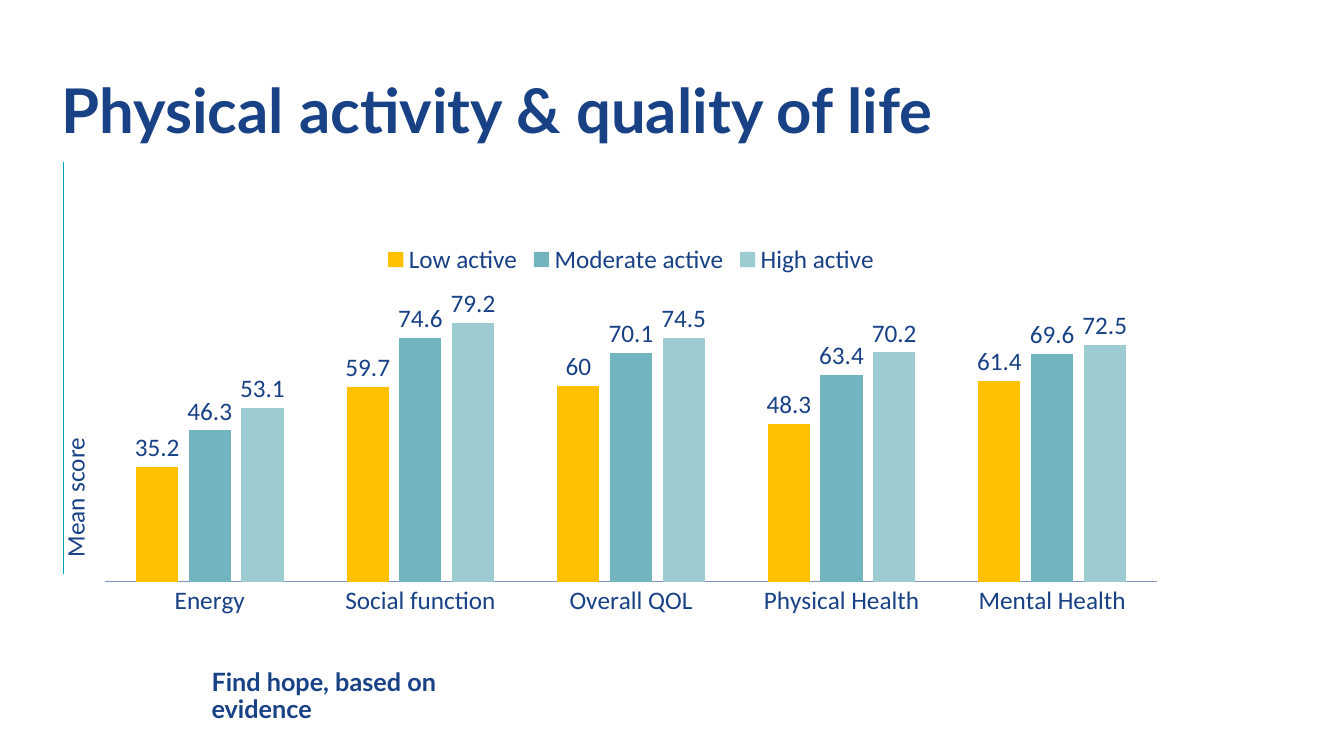
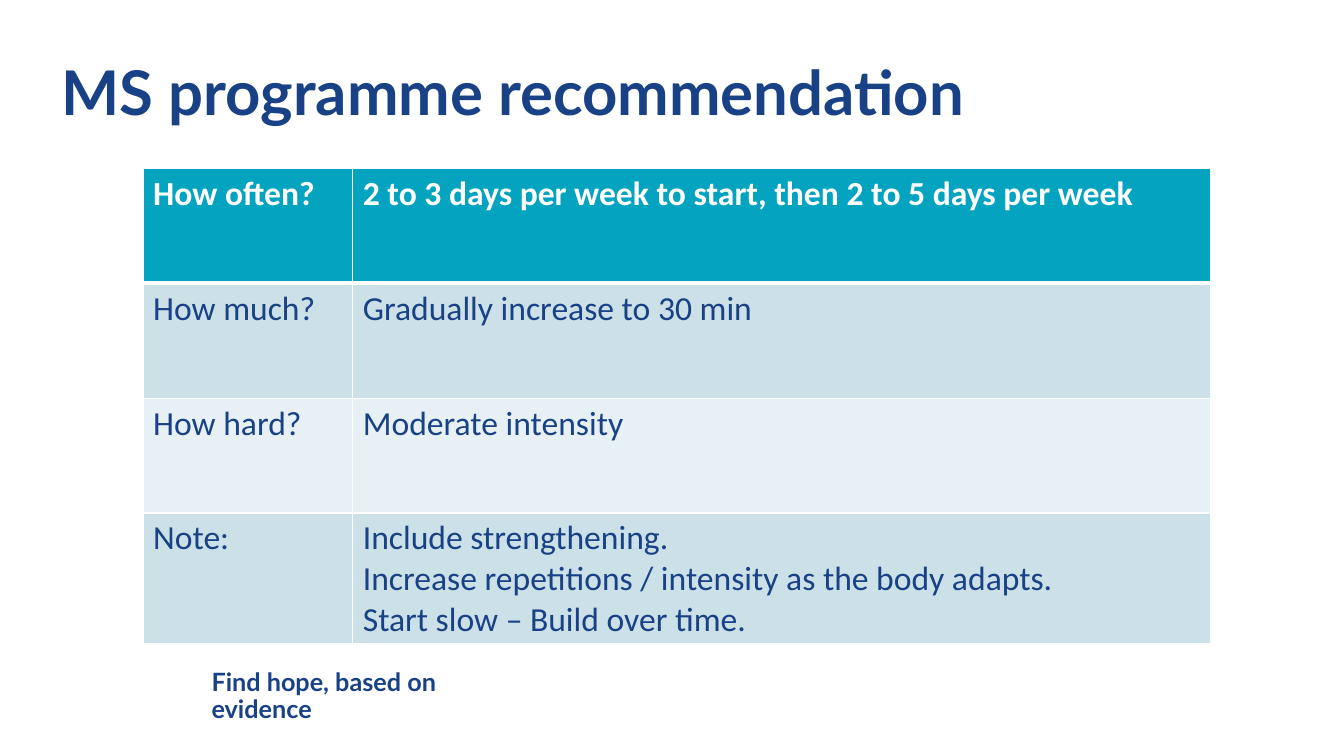
from pptx import Presentation
from pptx import util as u
from pptx.chart.data import CategoryChartData
from pptx.dml.color import RGBColor
from pptx.enum import chart as charts, shapes, text
from pptx.oxml import ns
from lxml import etree

NAVY = RGBColor(0x18, 0x41, 0x86)
TEAL = RGBColor(0x04, 0xA3, 0xBF)
WHITE = RGBColor(0xFF, 0xFF, 0xFF)
AMBER = RGBColor(0xFF, 0xC0, 0x00)
MID_TEAL = RGBColor(0x73, 0xB5, 0xBF)
PALE_TEAL = RGBColor(0x9D, 0xCB, 0xD2)
AXIS_BLUE = RGBColor(0x80, 0x94, 0xBC)
BAND_DARK = RGBColor(0xCC, 0xE0, 0xE8)
BAND_LIGHT = RGBColor(0xE7, 0xF0, 0xF4)
HEAD_FONT, BODY_FONT = "Lato", "Calibri"

deck = Presentation()
deck.slide_width, deck.slide_height = u.Inches(13.33), u.Inches(7.5)
COL, ROW = deck.slide_width / 100, deck.slide_height / 100


def grid(left, top, width, height):
    return int(left * COL), int(top * ROW), int(width * COL), int(height * ROW)


def write(frame, lines, size, font, color, bold=False, spacing=None):
    frame.word_wrap = True
    for index, line in enumerate(lines):
        para = frame.paragraphs[0] if index == 0 else frame.add_paragraph()
        para.line_spacing = spacing
        span = para.add_run()
        span.text = line
        span.font.size = u.Pt(size)
        span.font.name = font
        span.font.bold = bold
        span.font.color.rgb = color


pages = []
for title, title_top in [
    ("Physical activity & quality of life", 5.33),
    ("MS programme recommendation", 2.93),
]:
    page = deck.slides.add_slide(deck.slide_layouts[6])
    footer_box = page.shapes.add_textbox(*grid(15, 90.93, 25.65, 5.47))
    footer_box.text_frame.vertical_anchor = text.MSO_ANCHOR.BOTTOM
    write(footer_box.text_frame, ["Find hope, based on evidence"], 18, HEAD_FONT, NAVY, True, 0.9)
    title_box = page.shapes.add_textbox(*grid(3.83, title_top, 86.25, 19.33))
    title_box.text_frame.vertical_anchor = text.MSO_ANCHOR.MIDDLE
    write(title_box.text_frame, [title], 44, HEAD_FONT, NAVY, True, 0.9)
    pages.append(page)

chart_page, table_page = pages

scores = [
    ("Low active", AMBER, (35.2, 59.7, 60, 48.3, 61.4)),
    ("Moderate active", MID_TEAL, (46.3, 74.6, 70.1, 63.4, 69.6)),
    ("High active", PALE_TEAL, (53.1, 79.2, 74.5, 70.2, 72.5)),
]
data = CategoryChartData()
data.categories = ["Energy", "Social function", "Overall QOL", "Physical Health", "Mental Health"]
for name, color, values in scores:
    data.add_series(name, values)
chart = chart_page.shapes.add_chart(
    charts.XL_CHART_TYPE.COLUMN_CLUSTERED, *grid(6.15, 30.67, 81.6, 51.87), data
).chart
chart.has_title = False
chart.font.size = u.Pt(18)
chart.font.name = BODY_FONT
chart.font.color.rgb = NAVY
chart.has_legend = True
chart.legend.position = charts.XL_LEGEND_POSITION.TOP
chart.legend.include_in_layout = False
chart.value_axis.visible = False
chart.value_axis.has_major_gridlines = False
chart.value_axis.minimum_scale = 0
chart.value_axis.maximum_scale = 90
chart.category_axis.major_tick_mark = charts.XL_TICK_MARK.NONE
chart.category_axis.format.line.color.rgb = AXIS_BLUE
chart.category_axis.format.line.width = u.Pt(0.75)
plot = chart.plots[0]
plot.gap_width = 150
plot.overlap = -25
plot.vary_by_categories = False
for series, (name, color, values) in zip(plot.series, scores):
    series.format.fill.solid()
    series.format.fill.fore_color.rgb = color
    series.invert_if_negative = False
    labels = series.data_labels
    labels.show_value = True
    labels.position = charts.XL_LABEL_POSITION.OUTSIDE_END

axis_x = int(4.73 * COL)
axis_line = chart_page.shapes.add_connector(
    shapes.MSO_CONNECTOR.STRAIGHT, axis_x, int(21.47 * ROW), axis_x, int(75.87 * ROW)
)
axis_line.line.color.rgb = TEAL
axis_line.line.width = u.Pt(0.5)
etree.SubElement(axis_line._element.spPr, ns.qn("a:effectLst"))

axis_label = chart_page.shapes.add_textbox(*grid(4.05, 23.73, 3.75, 51.33))
axis_label._element.txBody.bodyPr.set("vert", "vert270")
write(axis_label.text_frame, ["Mean score"], 18, BODY_FONT, NAVY)

advice = [
    ("How often?", ["2 to 3 days per week to start, then 2 to 5 days per week"]),
    ("How much?", ["Gradually increase to 30 min"]),
    ("How hard?", ["Moderate intensity"]),
    ("Note:", [
        "Include strengthening.",
        "Increase repetitions / intensity as the body adapts.",
        "Start slow – Build over time.",
    ]),
]
table = table_page.shapes.add_table(
    len(advice), 2, *grid(10.65, 22.27, 79.43, 15.2 * len(advice))
).table
for column, share in zip(table.columns, (15.6, 63.83)):
    column.width = int(share * COL)
for row_index, (question, answers) in enumerate(advice):
    table.rows[row_index].height = int(15.2 * ROW)
    is_header = row_index == 0
    band = TEAL if is_header else (BAND_LIGHT, BAND_DARK)[row_index % 2]
    for column_index, lines in enumerate(([question], answers)):
        cell = table.cell(row_index, column_index)
        write(cell.text_frame, lines, 24, BODY_FONT, WHITE if is_header else NAVY, is_header)
        properties = cell._tc.get_or_add_tcPr()
        for side in ("lnL", "lnR", "lnT", "lnB"):
            under_header = (row_index, side) in ((0, "lnB"), (1, "lnT"))
            border = etree.SubElement(properties, ns.qn(f"a:{side}"))
            border.set("w", str(u.Pt(3 if under_header else 1)))
            paint = etree.SubElement(border, ns.qn("a:solidFill"))
            etree.SubElement(paint, ns.qn("a:srgbClr")).set("val", str(WHITE))
        cell.fill.solid()
        cell.fill.fore_color.rgb = band

deck.save("out.pptx")
